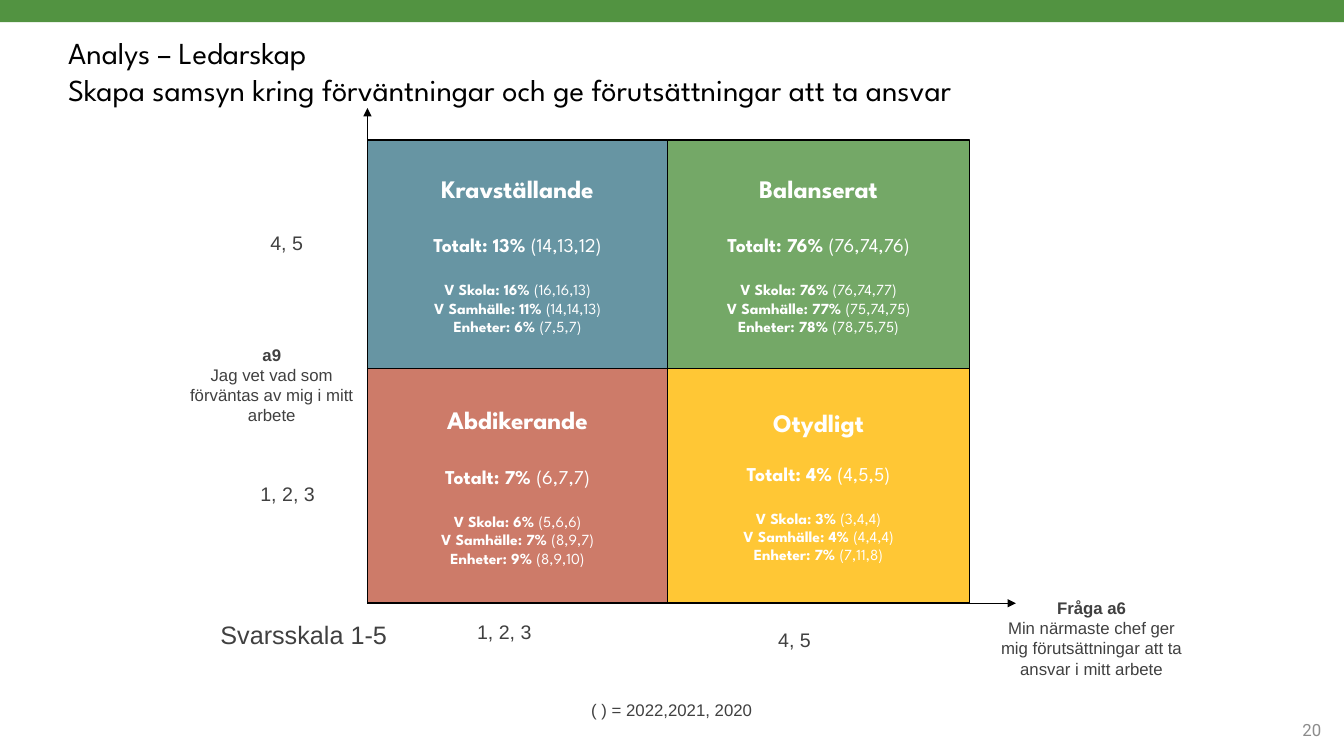
from dataclasses import dataclass

from lxml import etree
from pptx import Presentation
from pptx.dml.color import RGBColor
from pptx.enum.shapes import MSO_CONNECTOR, MSO_SHAPE
from pptx.enum.text import MSO_ANCHOR, MSO_AUTO_SIZE, PP_ALIGN
from pptx.oxml.ns import qn
from pptx.util import Cm, Pt

RECT = MSO_SHAPE.RECTANGLE
LINE = MSO_CONNECTOR.STRAIGHT
LEFT, MID, RIGHT = PP_ALIGN.LEFT, PP_ALIGN.CENTER, PP_ALIGN.RIGHT
MIDDLE = MSO_ANCHOR.MIDDLE
GROW = MSO_AUTO_SIZE.SHAPE_TO_FIT_TEXT

TITLE = "Analys – Ledarskap\vSkapa samsyn kring förväntningar och ge förutsättningar att ta ansvar"
PAGE = "20"

# column, row, colour, name, gap below name, [(bold text, plain text)]
FIELDS = [
    (1, 1, "FFBA03", "Otydligt", 16.8, [
        ("Totalt: 4% ", "(4,5,5)"), ("V Skola: 3% ", "(3,4,4)"),
        ("V Samhälle: 4% ", "(4,4,4)"), ("Enheter: 7% ", "(7,11,8)")]),
    (0, 0, "417B8D", "Kravställande", 21.6, [
        ("Totalt: 13% ", "(14,13,12)"), ("V Skola: 16% ", "(16,16,13)"),
        ("V Samhälle: 11% ", "(14,14,13)"), ("Enheter: 6% ", "(7,5,7)")]),
    (0, 1, "C15A44", "Abdikerande", 21.6, [
        ("Totalt: 7% ", "(6,7,7)"), ("V Skola: 6% ", "(5,6,6)"),
        ("V Samhälle: 7% ", "(8,9,7)"), ("Enheter: 9% ", "(8,9,10)")]),
    (1, 0, "529341", "Balanserat", 21.6, [
        ("Totalt: 76% ", "(76,74,76)"), ("V Skola: 76% ", "(76,74,77)"),
        ("V Samhälle: 77% ", "(75,74,75)"), ("Enheter: 78% ", "(78,75,75)")]),
]

# left, top, width, height, size, text
LABELS = [
    (11.76, 15.49, 1.9, 0.86, 14, "1, 2, 3"),
    (6.3, 12.01, 1.9, 0.86, 14, "1, 2, 3"),
    (19.35, 15.7, 1.35, 0.86, 14, "4, 5"),
    (6.55, 5.69, 1.35, 0.86, 14, "4, 5"),
    (5.28, 15.49, 4.75, 1.02, 18, "Svarsskala 1-5"),
    (14.63, 17.5, 4.6, 0.76, 12, "( ) = 2022,2021, 2020"),
]

# left, top, width, height, size, text with a bold first line
AXES = [
    (4.27, 8.56, 5.16, 2.31, 12,
     "a9\nJag vet vad som förväntas av mig i mitt arbete"),
    (24.87, 14.94, 5.28, 2.31, 12,
     "Fråga a6\nMin närmaste chef ger mig förutsättningar att ta ansvar i mitt arbete"),
]

COLS = [9.26, 16.83, 24.43]
ROWS = [3.53, 9.29, 15.2]
TIPS = [(COLS[0], 2.72), (25.6, ROWS[2])]
WIDE, HIGH = 33.87, 19.05


@dataclass(frozen=True)
class Theme:
    band: str = "529341"
    ink: str = "000000"
    label: str = "404040"
    light: str = "FFFFFF"
    faint: str = "8C8C8C"
    head: str = "League Spartan"
    body: str = "Arial"
    digit: str = "Roboto"
    title: float = 21.8
    name: float = 18
    total: float = 14
    detail: float = 11
    small: float = 12
    gap: float = 16.8


THEME = Theme()


def style(run, size, face, tint, bold=False):
    font = run.font
    font.size, font.name, font.bold = Pt(size), face, bold
    font.color.rgb = RGBColor.from_string(tint)


def add_text(slide, box, text, size, face, tint, align=MID, wrap=True, grow=True):
    frame = slide.shapes.add_textbox(*map(Cm, box)).text_frame
    frame.word_wrap = wrap
    if grow:
        frame.auto_size = GROW
    frame.text = text
    for para in frame.paragraphs:
        para.alignment = align
        for run in para.runs:
            style(run, size, face, tint)
    return frame


def add_rect(slide, box, tint):
    shape = slide.shapes.add_shape(RECT, *map(Cm, box))
    shape.shadow.inherit = False
    shape.fill.solid()
    shape.fill.fore_color.rgb = RGBColor.from_string(tint)
    shape.line.fill.background()
    return shape


def add_field(slide, col, row, tint, name, gap, stats):
    """Draw one quadrant with its name and figures."""
    x, y = COLS[col], ROWS[row]
    shape = add_rect(slide, (x, y, COLS[col + 1] - x, ROWS[row + 1] - y), tint)
    color = next(shape.element.spPr.iter(qn("a:srgbClr")))
    etree.SubElement(color, qn("a:alpha")).set("val", "80000")
    shape.line.color.rgb = RGBColor.from_string(THEME.ink)
    shape.line.width = Pt(1)

    frame = shape.text_frame
    frame.word_wrap = False
    frame.vertical_anchor = MIDDLE
    frame.text = name
    para = frame.paragraphs[0]
    para.alignment = MID
    style(para.runs[0], THEME.name, THEME.head, THEME.light, True)
    for i, pair in enumerate(stats):
        para = frame.add_paragraph()
        para.alignment = MID
        para.space_before = Pt((gap, THEME.gap, 0, 0)[i])
        size = THEME.detail if i else THEME.total
        for text, bold in zip(pair, (True, False)):
            run = para.add_run()
            run.text = text
            style(run, size, THEME.head, THEME.light, bold)


def add_arrow(slide, start, end):
    line = slide.shapes.add_connector(LINE, *map(Cm, start + end))
    line.line.color.rgb = RGBColor.from_string(THEME.ink)
    line.line.width = Pt(1)
    props = line.element.spPr
    etree.SubElement(props.find(qn("a:ln")), qn("a:tailEnd")).set("type", "triangle")
    etree.SubElement(props, qn("a:effectLst"))


def main():
    deck = Presentation()
    deck.slide_width, deck.slide_height = Cm(WIDE), Cm(HIGH)
    slide = deck.slides.add_slide(deck.slide_layouts[6])

    add_rect(slide, (0, 0, WIDE, 0.56), THEME.band)
    add_text(slide, (1.47, 0.74, 27.53, 2.95), TITLE, THEME.title,
             THEME.head, THEME.ink, LEFT, grow=False)
    number = add_text(slide, (31.72, 17.88, 1.83, 1.02), PAGE, THEME.small,
                      THEME.digit, THEME.faint, RIGHT)
    number.vertical_anchor = MIDDLE

    for field in FIELDS:
        add_field(slide, *field)
    for tip in TIPS:
        add_arrow(slide, (COLS[0], ROWS[2]), tip)
    for *box, size, text in AXES:
        frame = add_text(slide, box, text, size, THEME.body, THEME.label)
        frame.paragraphs[0].runs[0].font.bold = True
    for *box, size, text in LABELS:
        add_text(slide, box, text, size, THEME.body, THEME.label, wrap=False)

    deck.save("out.pptx")


if __name__ == "__main__":
    main()
